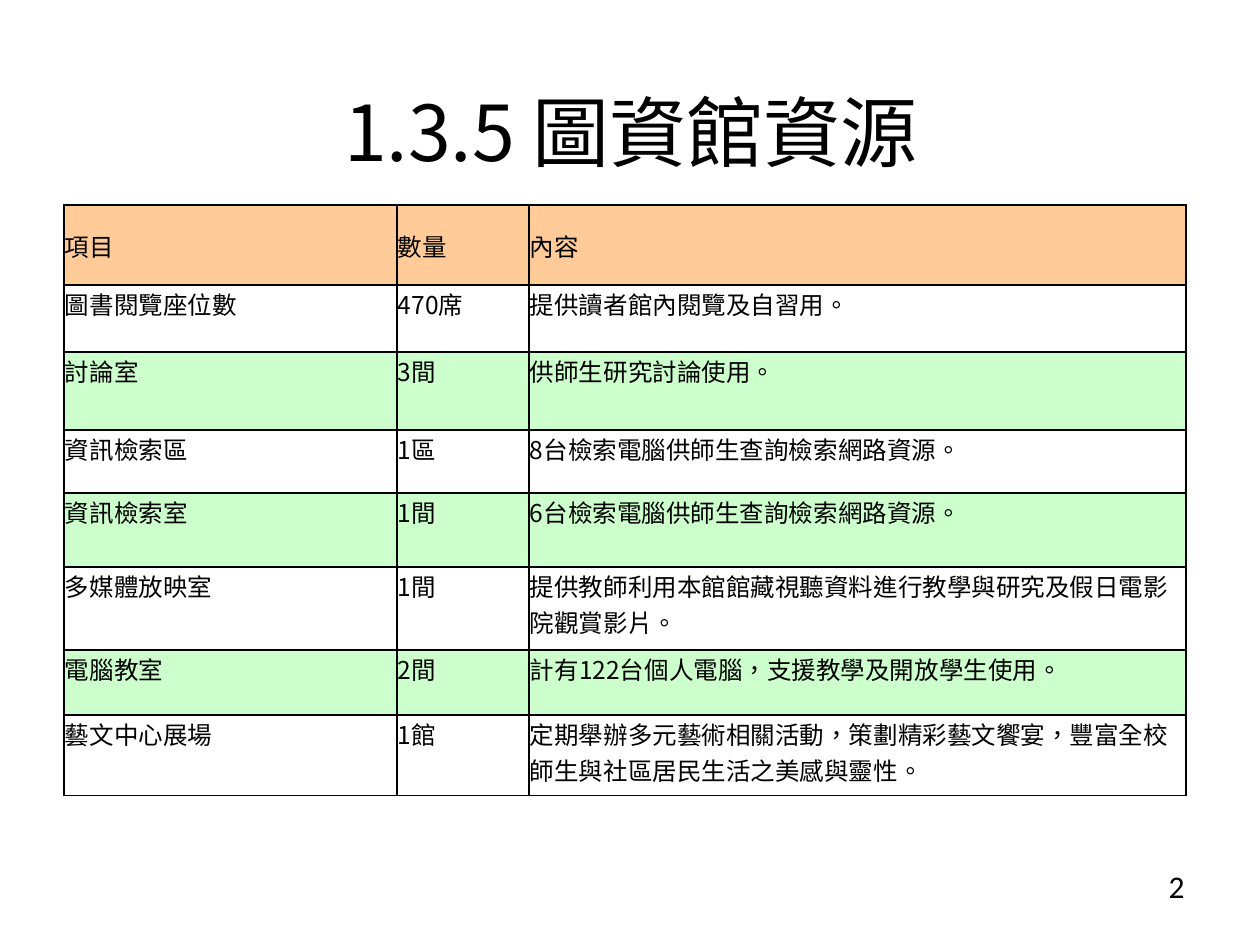
import pptx
import pptx.dml.color
import pptx.enum.lang
import pptx.enum.text
import pptx.oxml
import pptx.oxml.ns
import pptx.util

PX = 914400 // 126
CJK = "Noto Sans CJK SC"
ALIGN = pptx.enum.text.PP_ALIGN
ANCHOR = pptx.enum.text.MSO_ANCHOR
COLS = [333, 132, 657]
ROWS = [
    (80, "FFCC99", "項目", "數量", "內容"),
    (67, "FFFFFF", "圖書閱覽座位數", "470席", "提供讀者館內閱覽及自習用。"),
    (78, "CCFFCC", "討論室", "3間", "供師生研究討論使用。"),
    (63, "FFFFFF", "資訊檢索區", "1區", "8台檢索電腦供師生查詢檢索網路資源。"),
    (74, "CCFFCC", "資訊檢索室", "1間", "6台檢索電腦供師生查詢檢索網路資源。"),
    (83, "FFFFFF", "多媒體放映室", "1間",
     "提供教師利用本館館藏視聽資料進行教學與研究及假日電影院觀賞影片。"),
    (65, "CCFFCC", "電腦教室", "2間", "計有122台個人電腦，支援教學及開放學生使用。"),
    (81, "FFFFFF", "藝文中心展場", "1館",
     "定期舉辦多元藝術相關活動，策劃精彩藝文饗宴，豐富全校師生與社區居民生活之美感與靈性。"),
]


def color(code):
    return pptx.dml.color.RGBColor.from_string(code)


def scale(box):
    return [n * PX for n in box]


def assign(item, values):
    for key, value in values.items():
        setattr(item, key, value)


def write(frame, text, size, face=CJK, align=ALIGN.LEFT):
    para = frame.paragraphs[0]
    para.alignment = align
    run = para.add_run()
    run.text = text
    assign(run.font, {
        "size": pptx.util.Pt(size), "name": face, "bold": False,
        "language_id": pptx.enum.lang.MSO_LANGUAGE_ID.TRADITIONAL_CHINESE,
    })
    run.font.color.rgb = color("000000")
    east = pptx.oxml.parse_xml(
        f'<a:ea {pptx.oxml.ns.nsdecls("a")} typeface="{face}"/>')
    run.font._element.append(east)


def border(cell):
    props = cell._tc.get_or_add_tcPr()
    for side in "LRTB":
        props.append(pptx.oxml.parse_xml(
            f'<a:ln{side} {pptx.oxml.ns.nsdecls("a")} w="12700"><a:solidFill>'
            f'<a:srgbClr val="000000"/></a:solidFill></a:ln{side}>'))


def title(slide, box, text):
    shape = slide.shapes.title
    shape.left, shape.top, shape.width, shape.height = scale(box)
    assign(shape.text_frame, {
        "word_wrap": True, "vertical_anchor": ANCHOR.MIDDLE,
        "auto_size": pptx.enum.text.MSO_AUTO_SIZE.NONE,
    })
    write(shape.text_frame, text, 44, align=ALIGN.CENTER)


def table(slide, box):
    grid = slide.shapes.add_table(len(ROWS), len(COLS), *scale(box)).table
    assign(grid, {"first_row": False, "horz_banding": False})
    for col, width in zip(grid.columns, COLS):
        col.width = width * PX
    for i, (row, (height, fill, *texts)) in enumerate(zip(grid.rows, ROWS)):
        row.height = height * PX
        for cell, text in zip(row.cells, texts):
            assign(cell, {
                "margin_left": PX, "margin_right": PX,
                "margin_top": PX, "margin_bottom": 0,
                "vertical_anchor": ANCHOR.TOP if i else ANCHOR.MIDDLE,
            })
            border(cell)
            cell.fill.solid()
            cell.fill.fore_color.rgb = color(fill)
            write(cell.text_frame, text, 14)


def number(slide, box, text):
    frame = slide.shapes.add_textbox(*scale(box)).text_frame
    frame.word_wrap = True
    write(frame, text, 18, "Calibri", ALIGN.RIGHT)


def main():
    deck = pptx.Presentation()
    deck.slide_width = pptx.util.Inches(10)
    deck.slide_height = pptx.util.Inches(7.5)
    slide = deck.slides.add_slide(deck.slide_layouts[5])
    number(slide, (903, 861, 294, 66), "2")
    title(slide, (64, 82, 1134, 98), "1.3.5 圖資館資源")
    table(slide, (64, 205, sum(COLS), sum(row[0] for row in ROWS)))
    deck.save("out.pptx")


if __name__ == "__main__":
    main()
